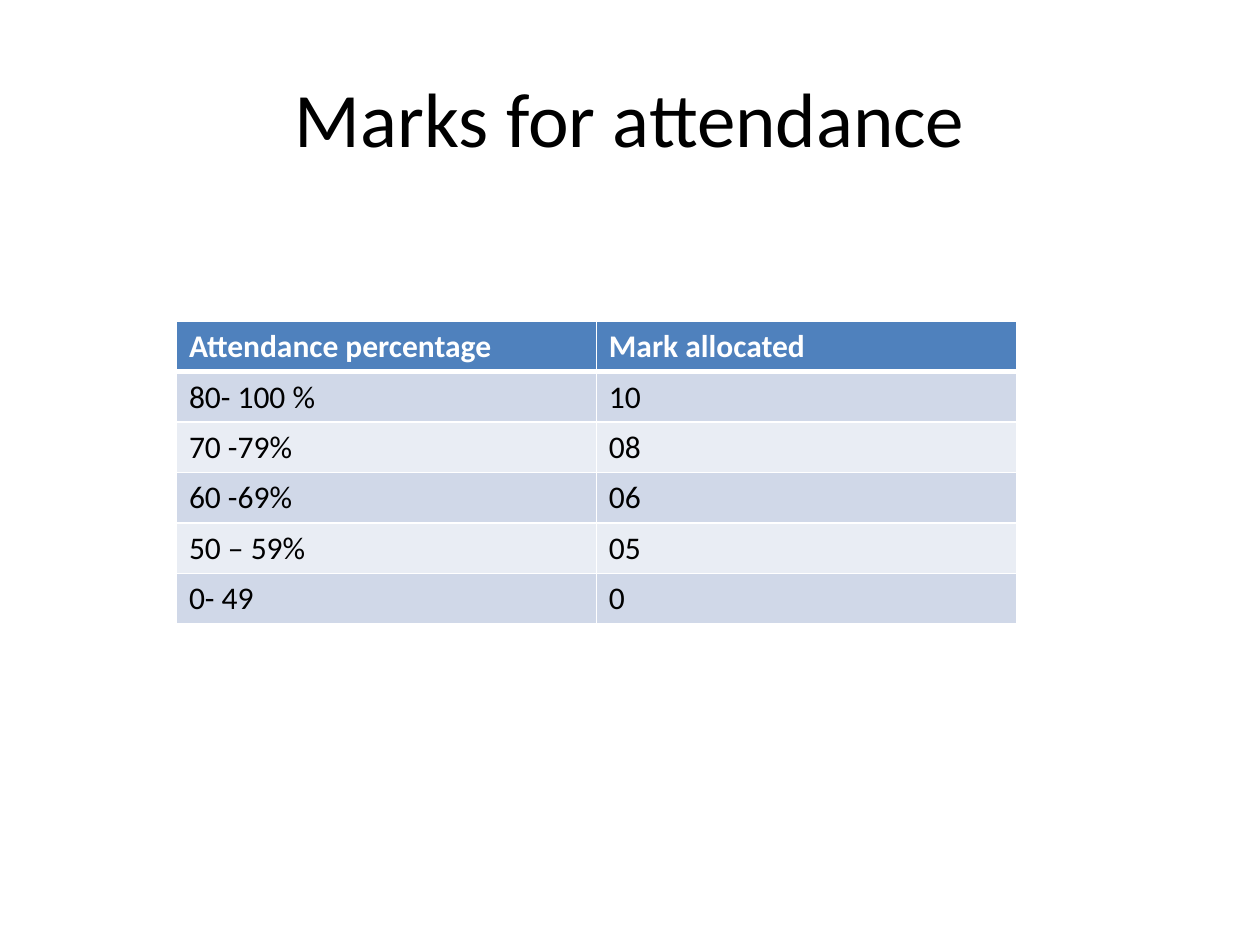
import dataclasses

import lxml.etree
import pptx
import pptx.dml.color
import pptx.enum.text
import pptx.oxml.ns
import pptx.util


@dataclasses.dataclass(frozen=True)
class Theme:
    """Colours, font and type sizes of the slide."""
    font: str = "Calibri"
    ink: str = "000000"
    paper: str = "FFFFFF"
    header: str = "4F81BD"
    bands: tuple = ("D0D8E8", "E9EDF4")
    title_size: int = 44
    table_size: int = 18
    thin: int = 1
    thick: int = 3


class SlideBuilder:
    """Places styled elements on a slide by shares of its size."""

    def __init__(self, deck, theme):
        """Add a blank slide to the deck."""
        self.deck = deck
        self.theme = theme
        self.slide = deck.slides.add_slide(deck.slide_layouts[6])

    def area(self, left, top, width, height):
        """Turn shares of the slide into lengths."""
        across, down = self.deck.slide_width, self.deck.slide_height
        return [int(share * side) for share, side in
                zip((left, top, width, height), (across, down, across, down))]

    def add_wording(self, frame, wording, size, colour, bold=False):
        """Add one styled run to a text frame."""
        run = frame.paragraphs[0].add_run()
        run.text = wording
        style = {"name": self.theme.font, "size": pptx.util.Pt(size), "bold": bold}
        for attribute, setting in style.items():
            setattr(run.font, attribute, setting)
        run.font.color.rgb = pptx.dml.color.RGBColor.from_string(colour)

    def title(self, wording, **shares):
        """Add a centred title."""
        frame = self.slide.shapes.add_textbox(*self.area(**shares)).text_frame
        layout = {"word_wrap": True, "vertical_anchor": pptx.enum.text.MSO_ANCHOR.MIDDLE}
        for attribute, setting in layout.items():
            setattr(frame, attribute, setting)
        frame.paragraphs[0].alignment = pptx.enum.text.PP_ALIGN.CENTER
        self.add_wording(frame, wording, self.theme.title_size, self.theme.ink)

    def border(self, cell, side, points):
        """Draw one edge of a table cell."""
        qn = pptx.oxml.ns.qn
        edge = lxml.etree.SubElement(cell._tc.get_or_add_tcPr(), qn(f"a:ln{side}"),
                                     w=str(pptx.util.Pt(points)))
        fill = lxml.etree.SubElement(edge, qn("a:solidFill"))
        lxml.etree.SubElement(fill, qn("a:srgbClr"), val=self.theme.paper)

    def table(self, rows, **shares):
        """Add a banded table whose first row is the header."""
        theme = self.theme
        grid = self.slide.shapes.add_table(len(rows), len(rows[0]), *self.area(**shares)).table
        for r, entries in enumerate(rows):
            is_header = r == 0
            background = theme.header if is_header else theme.bands[(r - 1) % 2]
            edges = {"L": theme.thin, "R": theme.thin,
                     "T": theme.thick if r == 1 else theme.thin,
                     "B": theme.thick if is_header else theme.thin}
            for c, wording in enumerate(entries):
                cell = grid.cell(r, c)
                for side, points in edges.items():
                    self.border(cell, side, points)
                cell.fill.solid()
                cell.fill.fore_color.rgb = pptx.dml.color.RGBColor.from_string(background)
                self.add_wording(cell.text_frame, wording, theme.table_size,
                                 theme.paper if is_header else theme.ink, is_header)


def main():
    """Build and save the attendance slide."""
    deck = pptx.Presentation()
    deck.slide_width = pptx.util.Inches(10)
    deck.slide_height = pptx.util.Inches(7.5)
    attendance = SlideBuilder(deck, Theme())
    attendance.title("Marks for attendance", left=0.05, top=0.04, width=0.9, height=1 / 6)
    marks = [
        ("Attendance percentage", "Mark allocated"),
        ("80- 100 %", "10"),
        ("70 -79%", "08"),
        ("60 -69%", "06"),
        ("50 – 59%", "05"),
        ("0- 49", "0"),
    ]
    attendance.table(marks, left=0.14, top=0.34, width=2 / 3, height=0.32)
    deck.save("out.pptx")


if __name__ == "__main__":
    main()
